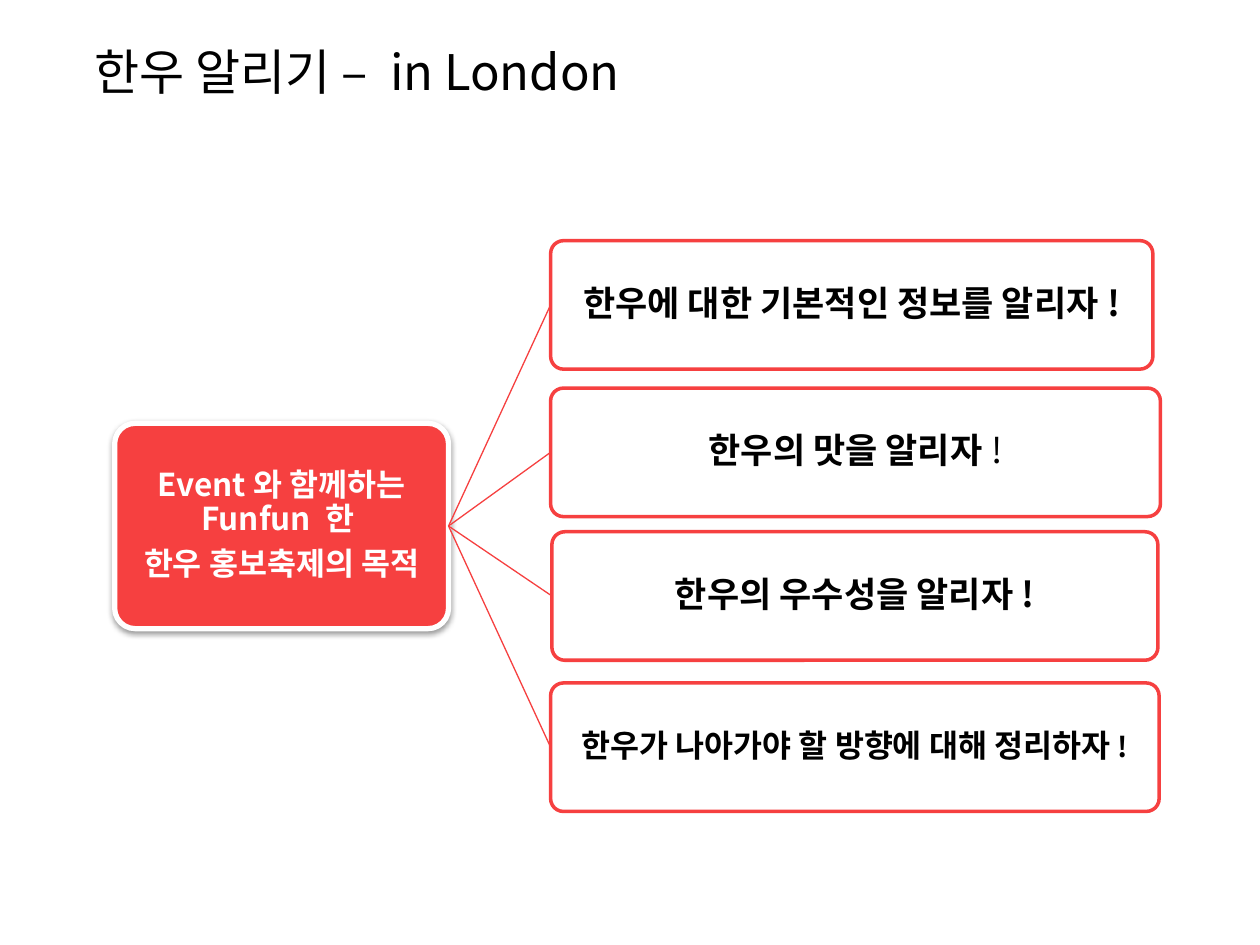
import dataclasses

import pptx
import pptx.dml.color
import pptx.enum.shapes
import pptx.enum.text
import pptx.oxml
import pptx.oxml.ns
import pptx.util


@dataclasses.dataclass(frozen=True)
class Theme:
    font: str = "Noto Sans CJK KR"
    red: str = "F64040"
    white: str = "FFFFFF"
    black: str = "000000"
    title_size: int = 28
    goal_size: int = 20
    small_size: int = 18
    mark_size: int = 16


def rgb(value):
    return pptx.dml.color.RGBColor.from_string(value)


def effects(content=""):
    return pptx.oxml.parse_xml(
        f'<a:effectLst {pptx.oxml.ns.nsdecls("a")}>{content}</a:effectLst>'
    )


class SlideBuilder:
    COLUMNS, ROWS = 100, 75

    def __init__(self, presentation, theme):
        self.theme = theme
        self.cell_width = presentation.slide_width / self.COLUMNS
        self.cell_height = presentation.slide_height / self.ROWS
        self.slide = presentation.slides.add_slide(presentation.slide_layouts[6])

    def place(self, column, row, columns, rows):
        return (
            round(column * self.cell_width),
            round(row * self.cell_height),
            round(columns * self.cell_width),
            round(rows * self.cell_height),
        )

    def style(self, font, size, color, bold=False):
        font.name = self.theme.font
        font.size = pptx.util.Pt(size)
        font.bold = bold
        font.color.rgb = rgb(color)

    def title(self, text, area):
        frame = self.slide.shapes.add_textbox(*self.place(*area)).text_frame
        frame.word_wrap = True
        frame.vertical_anchor = pptx.enum.text.MSO_ANCHOR.MIDDLE
        frame.text = text
        self.style(frame.paragraphs[0].font, self.theme.title_size, self.theme.black)

    def card(self, lines, area, size, fill, line, line_width, color):
        card = self.slide.shapes.add_shape(
            pptx.enum.shapes.MSO_SHAPE.ROUNDED_RECTANGLE, *self.place(*area)
        )
        card.adjustments[0] = 0.1
        card.shadow.inherit = False
        card.fill.solid()
        card.fill.fore_color.rgb = rgb(fill)
        card.line.color.rgb = rgb(line)
        card.line.width = pptx.util.Pt(line_width)
        frame = card.text_frame
        frame.word_wrap = True
        frame.vertical_anchor = pptx.enum.text.MSO_ANCHOR.MIDDLE
        frame.margin_left = frame.margin_right = pptx.util.Inches(0.01)
        frame.margin_top = frame.margin_bottom = pptx.util.Inches(0.01)
        frame.text = "\n".join(lines)
        for paragraph in frame.paragraphs:
            paragraph.alignment = pptx.enum.text.PP_ALIGN.CENTER
            paragraph.line_spacing = 0.9
            paragraph.space_after = pptx.util.Pt(0.35 * size)
            self.style(paragraph.font, size, color, bold=True)
        return card

    def purpose(self, lines, area):
        theme = self.theme
        card = self.card(
            lines, area, theme.small_size, theme.red, theme.white, 3, theme.white
        )
        properties = card._element.spPr
        properties.replace(
            properties.find(pptx.oxml.ns.qn("a:effectLst")),
            effects(
                '<a:outerShdw blurRad="40000" dist="20000" dir="5400000" rotWithShape="0">'
                f'<a:srgbClr val="{theme.black}"><a:alpha val="38000"/></a:srgbClr>'
                "</a:outerShdw>"
            ),
        )

    def goal(self, text, area, size, mark_size, mark_bold):
        theme = self.theme
        card = self.card([text], area, size, theme.white, theme.red, 2, theme.black)
        mark = card.text_frame.paragraphs[0].add_run()
        mark.text = "!"
        if mark_size != size:
            mark.font.size = pptx.util.Pt(mark_size)
        if not mark_bold:
            mark.font.bold = False

    def branch(self, start, end):
        branch = self.slide.shapes.add_connector(
            pptx.enum.shapes.MSO_CONNECTOR.STRAIGHT,
            *self.place(*start, *end),
        )
        branch.line.color.rgb = rgb(self.theme.red)
        branch.line.width = pptx.util.Pt(0.75)
        branch._element.spPr.append(effects())


def main():
    presentation = pptx.Presentation()
    presentation.slide_width = pptx.util.Inches(10)
    presentation.slide_height = pptx.util.Inches(7.5)
    theme = Theme()
    builder = SlideBuilder(presentation, theme)

    builder.title("한우 알리기 – in London", (6.5, 1.5, 86.6, 8.3))

    left, top, width, height = purpose_area = (9.1, 33.6, 26.5, 16.3)
    builder.purpose(
        ["Event와 함께하는 Funfun 한 ", "한우 홍보축제의 목적"], purpose_area
    )

    root = (left + width, top + height / 2)
    goal_height = 10.2
    large, small = theme.goal_size, theme.small_size
    goals = [
        ("한우에 대한 기본적인 정보를 알리자", 43.7, 19.1, 47.8, large, large, True),
        ("한우의 맛을 알리자", 43.7, 30.8, 48.4, large, large, False),
        ("한우의 우수성을 알리자", 43.8, 42.2, 48.1, large, large, True),
        ("한우가 나아가야 할 방향에 대해 정리하자", 43.7, 54.2, 48.3, small, theme.mark_size, True),
    ]
    for text, column, row, columns, size, mark_size, mark_bold in goals:
        builder.branch(root, (column, row + goal_height / 2))
        area = (column, row, columns, goal_height)
        builder.goal(text, area, size, mark_size, mark_bold)

    presentation.save("out.pptx")


if __name__ == "__main__":
    main()
